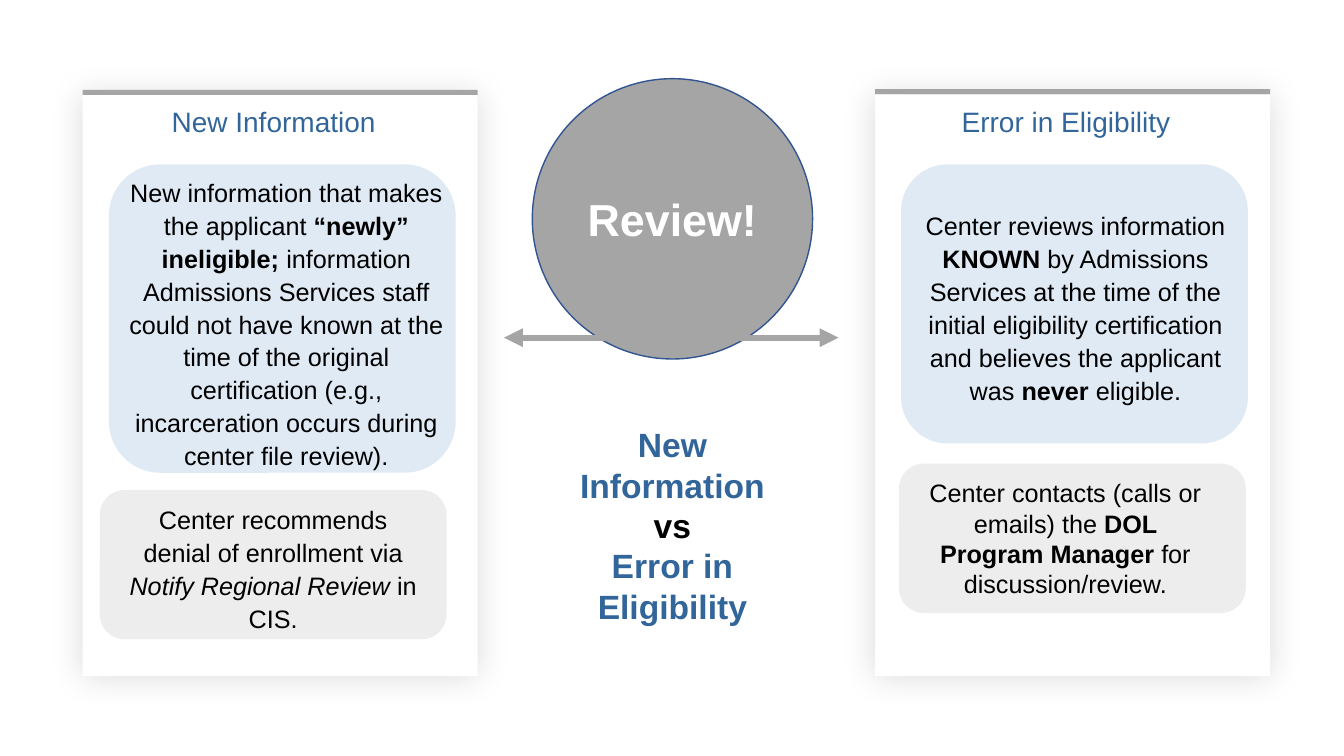
from lxml import etree
from pptx import Presentation
from pptx.dml.color import RGBColor
from pptx.enum import shapes, text
from pptx.oxml import ns
from pptx.util import Pt

WHITE = RGBColor(0xFF, 0xFF, 0xFF)
BLACK = RGBColor(0x00, 0x00, 0x00)
GRAY = RGBColor(0xA5, 0xA5, 0xA5)
PALE_GRAY = RGBColor(0xED, 0xED, 0xED)
PALE_BLUE = RGBColor(0xDF, 0xEA, 0xF5)
BLUE = RGBColor(0x32, 0x66, 0x9A)
OUTLINE_BLUE = RGBColor(0x32, 0x54, 0x91)

presentation = Presentation()
presentation.slide_width = Pt(960)
presentation.slide_height = Pt(540)
slide = presentation.slides.add_slide(presentation.slide_layouts[5])


def add_block(kind, box, fill):
    shape = slide.shapes.add_shape(kind, *[Pt(length) for length in box])
    shape.shadow.inherit = False
    shape.fill.solid()
    shape.fill.fore_color.rgb = fill
    shape.line.fill.background()
    return shape


def write(shape, paragraphs, size, color, spacing=None):
    frame = shape.text_frame
    frame.word_wrap = True
    for index, runs in enumerate(paragraphs):
        paragraph = frame.add_paragraph() if index else frame.paragraphs[0]
        paragraph_format = {"alignment": text.PP_ALIGN.CENTER, **(spacing or {})}
        for name, value in paragraph_format.items():
            setattr(paragraph, name, value)
        for words, style in runs:
            run = paragraph.add_run()
            run.text = words
            run.font.color.rgb = style.get("color", color)
            font_format = {
                "name": "Arial",
                "size": Pt(size),
                "bold": style.get("bold", False),
                "italic": style.get("italic", False),
            }
            for name, value in font_format.items():
                setattr(run.font, name, value)


bold = {"bold": True}
loose = {"line_spacing": 1.09, "space_before": Pt(6)}
tight = {"line_spacing": 1.0, "space_before": Pt(0)}

cards = [
    {
        "left": 59,
        "bar_top": 64.2,
        "heading": "New Information",
        "panels": [
            (PALE_BLUE, (77.8, 117.4, 247.7, 220.3), (81.4, 121, 246.2, 219.6), loose, [
                ("New information that makes the applicant ", {}),
                ("“newly” ineligible; ", bold),
                ("information Admissions Services staff could not have known at the time "
                 "of the original certification (e.g., incarceration occurs during "
                 "center file review).", {}),
            ]),
            (PALE_GRAY, (71.3, 350, 247.7, 106.6), (83.5, 355, 223.2, 100.8), loose, [
                ("Center recommends denial of enrollment via ", {}),
                ("Notify Regional Review ", {"italic": True}),
                ("in CIS.", {}),
            ]),
        ],
    },
    {
        "left": 625,
        "bar_top": 63.6,
        "heading": "Error in Eligibility",
        "panels": [
            (PALE_BLUE, (643.7, 117.4, 247.7, 199.4), (645.1, 144.7, 246.2, 148.3), loose, [
                ("Center reviews information ", {}),
                ("KNOWN", bold),
                (" by Admissions Services at the time of the initial eligibility "
                 "certification and believes the applicant was ", {}),
                ("never", bold),
                (" eligible.", {}),
            ]),
            (PALE_GRAY, (642.2, 331.2, 247.7, 106.6), (649.4, 337.7, 223.2, 94.3), tight, [
                ("Center contacts (calls or emails) the ", {}),
                ("DOL Program Manager ", bold),
                ("for discussion/review.", {}),
            ]),
        ],
    },
]

for card in cards:
    left = card["left"]
    backing = add_block(shapes.MSO_SHAPE.RECTANGLE, (left, 67.7, 282.2, 415.4), WHITE)
    effects = backing.element.spPr.find(ns.qn("a:effectLst"))
    glow = etree.SubElement(effects, ns.qn("a:outerShdw"), blurRad=str(Pt(23.8)),
                            dist="0", dir="0", algn="ctr", rotWithShape="0")
    glow_color = etree.SubElement(glow, ns.qn("a:srgbClr"), val=str(BLACK))
    etree.SubElement(glow_color, ns.qn("a:alpha"), val="15000")
    add_block(shapes.MSO_SHAPE.RECTANGLE, (left, card["bar_top"], 282.2, 3.6), GRAY)
    for fill, panel_box, text_box, spacing, runs in card["panels"]:
        add_block(shapes.MSO_SHAPE.ROUNDED_RECTANGLE, panel_box, fill)
        description = slide.shapes.add_textbox(*[Pt(length) for length in text_box])
        write(description, [runs], 18, BLACK, spacing)
    heading = slide.shapes.add_textbox(Pt(left + 49), Pt(71.3), Pt(175), Pt(31.5))
    write(heading, [[(card["heading"], {})]], 20, BLUE)

review = add_block(shapes.MSO_SHAPE.OVAL, (380.2, 56.2, 200.2, 200.2), GRAY)
review.line.color.rgb = OUTLINE_BLUE
review.line.width = Pt(1)
review.text_frame.vertical_anchor = text.MSO_ANCHOR.MIDDLE
write(review, [[("Review!", bold)]], 32, WHITE)

for start, end in [(498.2, 599), (452.9, 360)]:
    arrow = slide.shapes.add_connector(
        shapes.MSO_CONNECTOR.STRAIGHT, Pt(start), Pt(241.2), Pt(end), Pt(241.2))
    arrow.line.color.rgb = GRAY
    arrow.line.width = Pt(4.5)
    etree.SubElement(arrow.line._get_or_add_ln(), ns.qn("a:tailEnd"), type="triangle")
    etree.SubElement(arrow.element.spPr, ns.qn("a:effectLst"))

title = slide.shapes.title
title_format = {"left": Pt(380.2), "top": Pt(299.5), "width": Pt(200.2), "height": Pt(152.6)}
for name, value in title_format.items():
    setattr(title, name, value)
frame_format = {
    "vertical_anchor": text.MSO_ANCHOR.TOP,
    "auto_size": text.MSO_AUTO_SIZE.NONE,
    "margin_left": Pt(10),
    "margin_right": Pt(10),
}
for name, value in frame_format.items():
    setattr(title.text_frame, name, value)
write(title, [
    [("New Information", bold)],
    [("vs", {"bold": True, "color": BLACK})],
    [("Error in Eligibility", bold)],
], 24, BLUE)

presentation.save("out.pptx")
